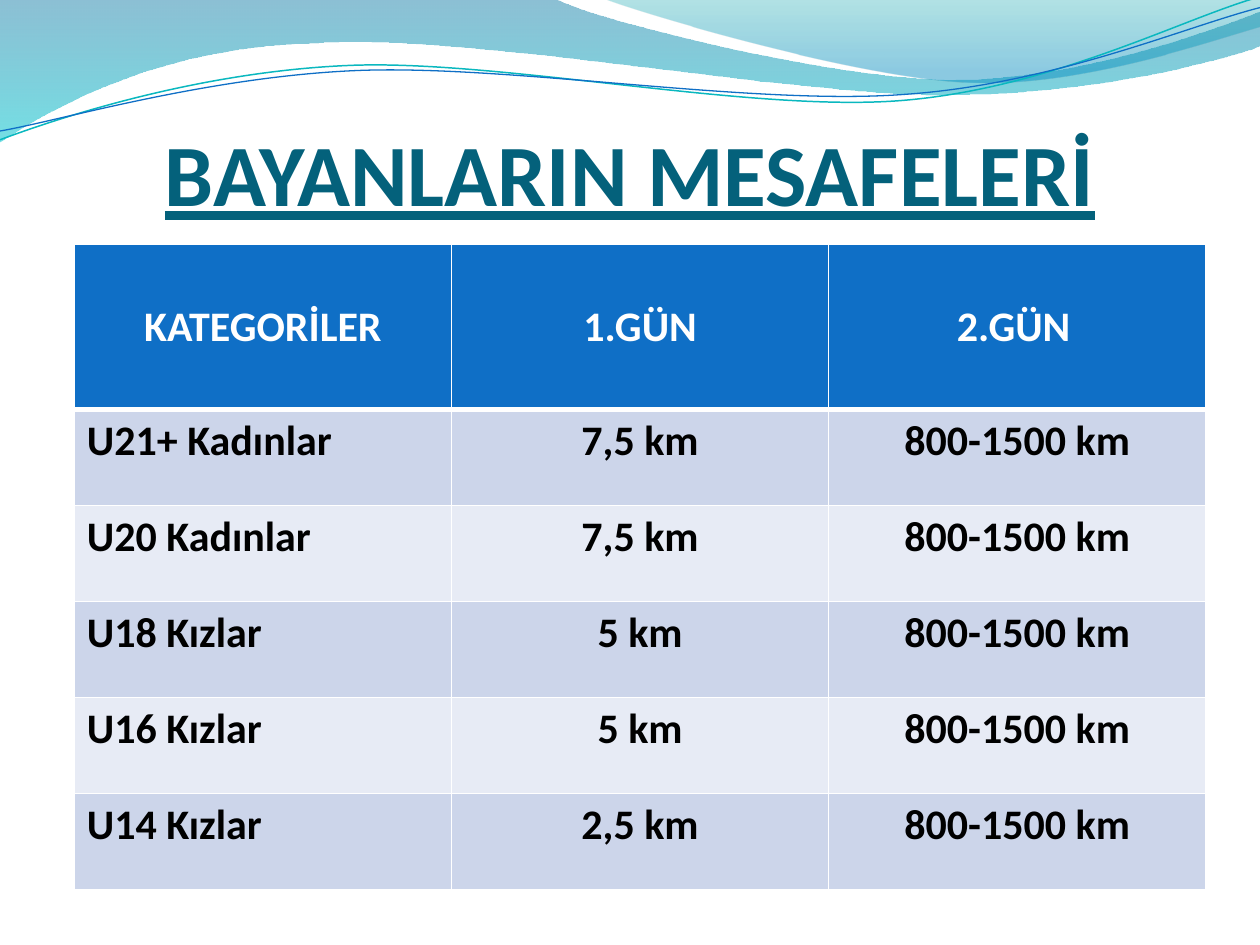
import math
from dataclasses import dataclass

from lxml import etree
from pptx import Presentation, util as u
from pptx.dml.color import RGBColor
from pptx.enum import text
from pptx.oxml.ns import qn

TITLE = "BAYANLARIN MESAFELERİ"
HEADER = ("KATEGORİLER", "1.GÜN", "2.GÜN")
SECOND_DAY = "800-1500 km"
FIRST_DAY = (
    ("U21+ Kadınlar", "7,5 km"),
    ("U20 Kadınlar", "7,5 km"),
    ("U18 Kızlar", "5 km"),
    ("U16 Kızlar", "5 km"),
    ("U14 Kızlar", "2,5 km"),
)
ROWS = [HEADER] + [(category, day, SECOND_DAY) for category, day in FIRST_DAY]
TABLE_HEIGHT, HEADER_HEIGHT = 5.12, 1.31
WAVE_ROTATION = 357.3


@dataclass(frozen=True)
class Theme:
    font: str = "Calibri"
    title_size: int = 50
    cell_size: int = 24
    gap_size: int = 18
    title: str = "04617B"
    header: str = "0F6FC6"
    bands: tuple = ("CCD5EA", "E7EBF5")
    white: str = "FFFFFF"
    black: str = "000000"
    teal: str = "0AB8BF"


THEME = Theme()

BANDS = (
    {
        "box": (-0.01, -0.01, 10.02, 1.14),
        "steps": [
            (0, 0), (4.4, -0.01),
            (4.76, 0.17, 6.64, 0.63, 7.58, 0.63), (8.53, 0.63, 9.58, 0.26, 10, 0.09),
            (10.01, 0.36),
            (9.83, 0.44, 8.7, 0.76, 7.46, 0.75), (6.22, 0.75, 3.82, 0.28, 2.57, 0.34),
            (1.29, 0.36, 0.46, 0.83, -0.01, 1.13), (0, 0),
        ],
        "stops": ((0, "0074A1", 45), (1, "00C6CF", 55)),
    },
    {
        "box": (4.79, -0.01, 5.21, 0.7),
        "steps": [
            (4.79, -0.01),
            (5.09, 0.11, 6.82, 0.62, 7.69, 0.65), (8.56, 0.69, 9.61, 0.32, 10, 0.21),
            (10, 0), (4.79, -0.01),
        ],
        "stops": ((0, "00A1A9", 30), (0.8, "008BBF", 45)),
    },
)
WAVES = (
    {
        "box": (-0.02, 0.22, 10.02, 0.71),
        "steps": [
            (0, 1.11), (0.48, 0.93, 1.58, 0.57, 2.77, 0.52),
            (3.95, 0.47, 5.93, 0.89, 7.13, 0.8), (8.33, 0.71, 9.38, 0.15, 9.98, -0.02),
        ],
        "color": THEME.teal, "width": 0.85,
    },
    {
        "box": (-0.02, 0.3, 10.03, 0.58),
        "steps": [
            (0, 1.04), (0.47, 0.96, 1.64, 0.61, 2.83, 0.56),
            (4.03, 0.51, 5.97, 0.84, 7.17, 0.75), (8.36, 0.67, 9.41, 0.21, 10, 0.06),
        ],
        "color": THEME.header, "width": 0.75,
    },
)


def rgb(color):
    return RGBColor.from_string(color)


def add_outline(slide, box, steps, rotation=0, close=False):
    left, top, width, height = box
    builder = slide.shapes.build_freeform(u.Inches(left), u.Inches(top))
    builder.add_line_segments([(u.Inches(left + width), u.Inches(top + height))], close=False)
    shape = builder.convert_to_shape()
    shape.shadow.inherit = False
    shape.rotation = rotation
    cosine, sine = math.cos(math.radians(rotation)), math.sin(math.radians(rotation))
    outline = shape.element.spPr.find(".//" + qn("a:path"))
    for child in list(outline):
        outline.remove(child)
    for index, step in enumerate(steps):
        kind = "moveTo" if index == 0 else "lnTo" if len(step) == 2 else "cubicBezTo"
        command = etree.SubElement(outline, qn("a:" + kind))
        for x, y in zip(step[::2], step[1::2]):
            across, down = x - left - width / 2, y - top - height / 2
            local_x = across * cosine + down * sine + width / 2
            local_y = down * cosine - across * sine + height / 2
            etree.SubElement(command, qn("a:pt"),
                             x=str(u.Inches(local_x)), y=str(u.Inches(local_y)))
    if close:
        etree.SubElement(outline, qn("a:close"))
    return shape


def add_band(slide, band):
    shape = add_outline(slide, band["box"], band["steps"], close=True)
    shape.line.fill.background()
    shape.fill.gradient()
    shape.fill.gradient_angle = 270
    for stop, (position, color, _) in zip(shape.fill.gradient_stops, band["stops"]):
        stop.position = position
        stop.color.rgb = rgb(color)
    colors = shape.element.spPr.findall(".//" + qn("a:srgbClr"))
    for element, (_, _, opacity) in zip(colors, band["stops"]):
        etree.SubElement(element, qn("a:alpha"), val=str(opacity * 1000))


def add_wave(slide, wave):
    shape = add_outline(slide, wave["box"], wave["steps"], rotation=WAVE_ROTATION)
    shape.fill.background()
    shape.line.color.rgb = rgb(wave["color"])
    shape.line.width = u.Pt(wave["width"])


def style(paragraph, size, color, centred=True):
    paragraph.alignment = text.PP_ALIGN.CENTER if centred else text.PP_ALIGN.LEFT
    font = paragraph.font
    font.name, font.size, font.bold = THEME.font, u.Pt(size), True
    font.color.rgb = rgb(color)


def set_title(slide):
    title = slide.shapes.title
    title.left, title.top, title.width, title.height = map(u.Inches, (0.5, 0.77, 9, 1.01))
    frame = title.text_frame
    frame.text = TITLE
    frame.auto_size = text.MSO_AUTO_SIZE.NONE
    frame.vertical_anchor = text.MSO_ANCHOR.BOTTOM
    frame.margin_left = frame.margin_right = frame.margin_bottom = 0
    frame.margin_top = u.Inches(0.05)
    style(frame.paragraphs[0], THEME.title_size, THEME.title)
    frame.paragraphs[0].font.underline = True
    slide.shapes.element.append(title.element)


def set_header_borders(cell):
    properties = cell._tc.get_or_add_tcPr()
    for side, width in {"L": 1, "R": 1, "T": 1, "B": 3}.items():
        line = etree.SubElement(properties, qn("a:ln" + side), w=str(u.Pt(width)))
        fill = etree.SubElement(line, qn("a:solidFill"))
        etree.SubElement(fill, qn("a:srgbClr"), val=THEME.white)


def add_distances(slide):
    body_height = (TABLE_HEIGHT - HEADER_HEIGHT) / len(FIRST_DAY)
    table = slide.shapes.add_table(
        len(ROWS), len(HEADER), u.Inches(0.59), u.Inches(1.94),
        u.Inches(8.98), u.Inches(TABLE_HEIGHT),
    ).table
    for row, values in enumerate(ROWS):
        is_header = row == 0
        table.rows[row].height = u.Inches(HEADER_HEIGHT if is_header else body_height)
        for column, value in enumerate(values):
            cell = table.cell(row, column)
            if is_header:
                set_header_borders(cell)
            cell.fill.solid()
            cell.fill.fore_color.rgb = rgb(THEME.header if is_header else THEME.bands[(row - 1) % 2])
            cell.vertical_anchor = text.MSO_ANCHOR.MIDDLE if is_header else text.MSO_ANCHOR.TOP
            cell.text = value
            style(cell.text_frame.paragraphs[0], THEME.cell_size,
                  THEME.white if is_header else THEME.black, is_header or column > 0)
    span = table.cell(0, len(HEADER) - 1).text_frame.paragraphs[0].add_run()
    span.text = " "
    span.font.size = u.Pt(THEME.gap_size)


def main():
    deck = Presentation()
    deck.slide_width, deck.slide_height = u.Inches(10), u.Inches(7.5)
    slide = deck.slides.add_slide(deck.slide_layouts.get_by_name("Title Only"))
    for band in BANDS:
        add_band(slide, band)
    for wave in WAVES:
        add_wave(slide, wave)
    set_title(slide)
    add_distances(slide)
    deck.save("out.pptx")


if __name__ == "__main__":
    main()
